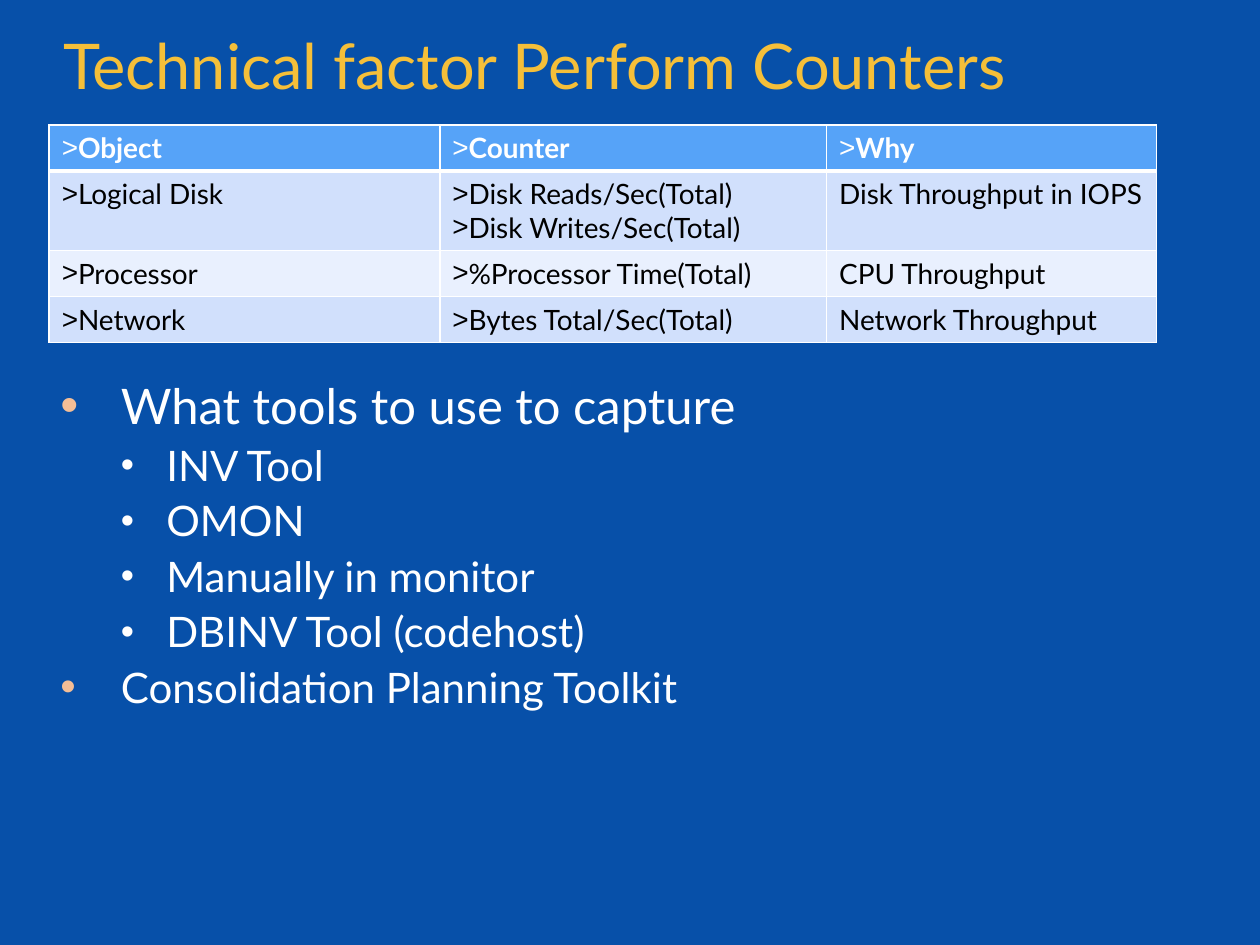
from dataclasses import dataclass

from lxml.etree import SubElement
from pptx import Presentation
from pptx.dml.color import RGBColor
from pptx.enum.text import MSO_ANCHOR as Anchor, MSO_AUTO_SIZE as AutoSize, PP_ALIGN as Align
from pptx.oxml.ns import qn
from pptx.util import Inches, Pt


@dataclass(frozen=True)
class Theme:
    font: str = "Lato"
    background: str = "0750A9"
    title: str = "F5BF39"
    light: str = "FFFFFF"
    dark: str = "000000"
    accent: str = "F4BE96"
    header: str = "56A3F8"
    bands: tuple = ("D1E0FC", "E9F0FE")
    title_size: int = 36
    lead_size: int = 28
    list_size: int = 24
    table_size: int = 16
    line_spacing: float = 0.85
    space_before: float = 0.3


class SlideBuilder:
    def __init__(self, slide, theme):
        self.slide = slide
        self.theme = theme
        fill = slide.background.fill
        fill.solid()
        fill.fore_color.rgb = RGBColor.from_string(theme.background)

    def place(self, shape, left, top, width, height):
        shape.left, shape.top = Inches(left), Inches(top)
        shape.width, shape.height = Inches(width), Inches(height)
        shape.text_frame.auto_size = AutoSize.NONE
        shape.text_frame.word_wrap = True

    def style(self, paragraph, size, color, bold=False):
        for run in paragraph.runs:
            run.font.name = self.theme.font
            run.font.size = Pt(size)
            run.font.bold = bold
            run.font.color.rgb = RGBColor.from_string(color)

    def bullet(self, paragraph, character, margin=0, hanging=0, color=None, percent=100):
        properties = paragraph._p.get_or_add_pPr()
        properties.set("marL", str(Inches(margin)))
        properties.set("indent", str(-Inches(hanging)))
        if color:
            bullet_color = SubElement(properties, qn("a:buClr"))
            SubElement(bullet_color, qn("a:srgbClr"), val=color)
        SubElement(properties, qn("a:buSzPct"), val=str(percent * 1000))
        SubElement(properties, qn("a:buFont"), typeface="Arial")
        SubElement(properties, qn("a:buChar"), char=character)

    def title(self, text, *box):
        shape = self.slide.shapes.title
        self.place(shape, *box)
        shape.text_frame.text = text
        shape.text_frame.vertical_anchor = Anchor.MIDDLE
        paragraph = shape.text_frame.paragraphs[0]
        paragraph.alignment = Align.LEFT
        paragraph.line_spacing = self.theme.line_spacing
        self.style(paragraph, self.theme.title_size, self.theme.title)

    def bullets(self, items, *box):
        theme = self.theme
        shape = self.slide.placeholders[1]
        self.place(shape, *box)
        shape.text_frame.text = "\n".join(text for text, level, size in items)
        for index, (text, level, size) in enumerate(items):
            paragraph = shape.text_frame.paragraphs[index]
            paragraph.level = level
            if level:
                self.bullet(paragraph, "•", 0.84, 0.36, theme.light, 90)
            else:
                self.bullet(paragraph, "•", 0.48, 0.48, theme.accent, 105)
            paragraph.line_spacing = theme.line_spacing
            paragraph.space_before = Pt(size * theme.space_before if index else 0)
            self.style(paragraph, size, theme.light)

    def borders(self, cell, top, bottom):
        properties = cell._tc.get_or_add_tcPr()
        for side, width in (("L", 1), ("R", 1), ("T", top), ("B", bottom)):
            line = SubElement(properties, qn(f"a:ln{side}"), w=str(Pt(width)))
            fill = SubElement(line, qn("a:solidFill"))
            SubElement(fill, qn("a:srgbClr"), val=self.theme.light)

    def table(self, rows, column_widths, row_heights, left, top):
        theme = self.theme
        table = self.slide.shapes.add_table(
            len(rows), len(column_widths), Inches(left), Inches(top),
            Inches(sum(column_widths)), Inches(sum(row_heights))).table
        for column, width in zip(table.columns, column_widths):
            column.width = Inches(width)
        for row, height in zip(table.rows, row_heights):
            row.height = Inches(height)
        for row_index, row in enumerate(rows):
            is_header = row_index == 0
            fill = theme.header if is_header else theme.bands[(row_index - 1) % 2]
            color = theme.light if is_header else theme.dark
            for column_index, text in enumerate(row):
                cell = table.cell(row_index, column_index)
                self.borders(cell, 3 if row_index == 1 else 1, 3 if is_header else 1)
                cell.fill.solid()
                cell.fill.fore_color.rgb = RGBColor.from_string(fill)
                cell.text_frame.text = text
                for paragraph in cell.text_frame.paragraphs:
                    if is_header or column_index < 2:
                        self.bullet(paragraph, ">")
                    self.style(paragraph, theme.table_size, color, is_header)


def main():
    presentation = Presentation()
    presentation.slide_width, presentation.slide_height = Inches(10), Inches(7.5)
    theme = Theme()
    slide = presentation.slides.add_slide(presentation.slide_layouts[1])
    builder = SlideBuilder(slide, theme)
    builder.title("Technical factor Perform Counters", 0.4, 0.25, 9.18, 0.62)
    builder.table([
        ("Object", "Counter", "Why"),
        ("Logical Disk", "Disk Reads/Sec(Total)\nDisk Writes/Sec(Total)", "Disk Throughput in IOPS"),
        ("Processor", "%Processor Time(Total)", "CPU Throughput"),
        ("Network", "Bytes Total/Sec(Total)", "Network Throughput"),
    ], (3.1, 3.07, 2.62), (0.36, 0.63, 0.36, 0.36), 0.39, 0.99)
    builder.bullets([
        ("What tools to use to capture", 0, theme.lead_size),
        ("INV Tool", 1, theme.list_size),
        ("OMON", 1, theme.list_size),
        ("Manually in monitor", 1, theme.list_size),
        ("DBINV Tool (codehost)", 1, theme.list_size),
        ("Consolidation Planning Toolkit", 0, theme.list_size),
    ], 0.38, 3, 9.17, 4.6)
    presentation.save("out.pptx")


if __name__ == "__main__":
    main()
